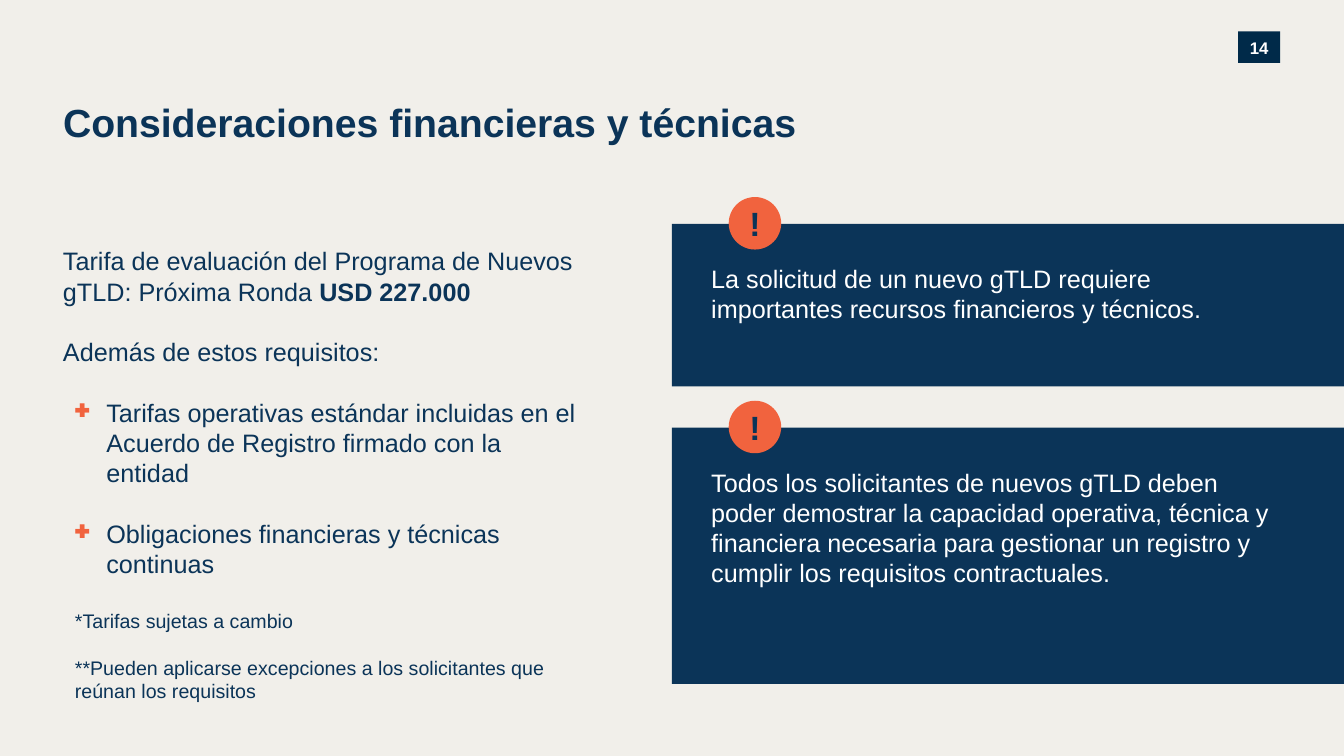
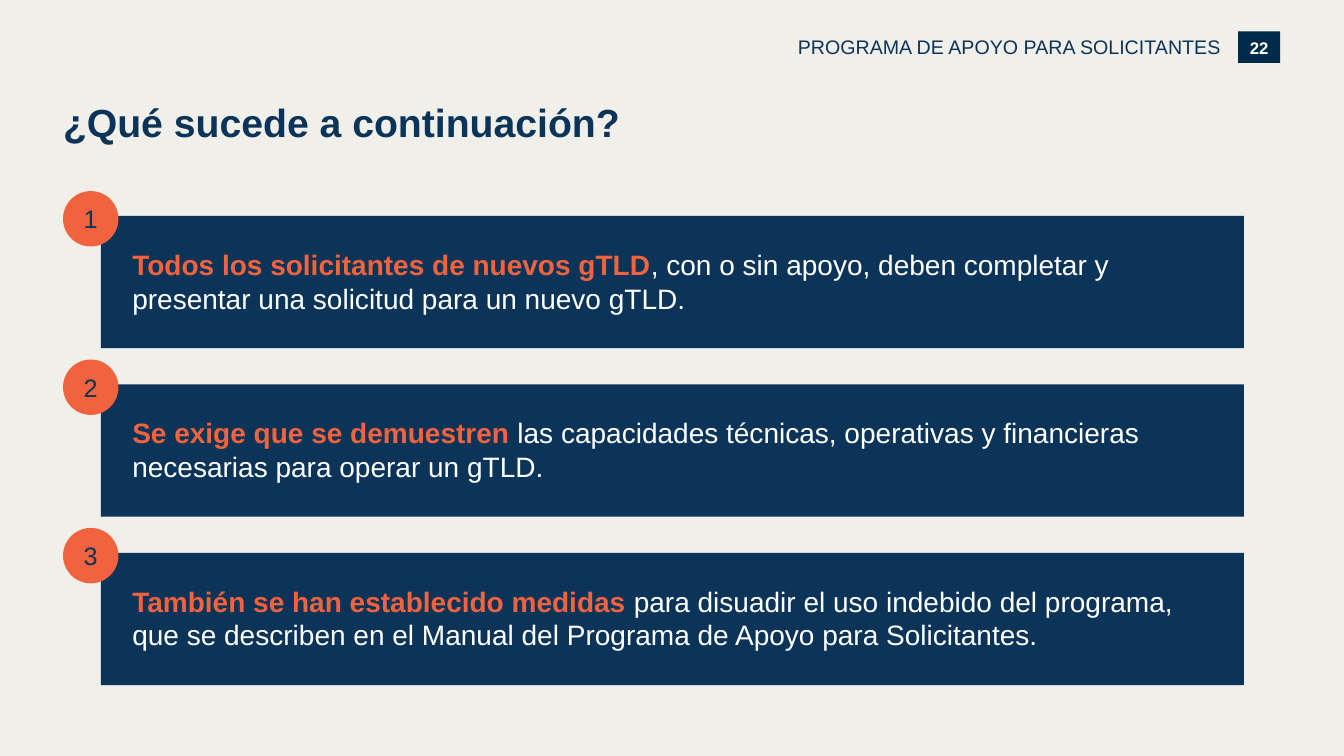
"""Build two slides on applying for a new gTLD."""
from lxml.etree import SubElement
from pptx import Presentation
from pptx.dml.color import RGBColor as RGB
from pptx.enum.shapes import MSO_SHAPE as Kind
from pptx.enum.text import MSO_ANCHOR as Anchor, MSO_AUTO_SIZE as Auto, PP_ALIGN as Align
from pptx.oxml.ns import qn
from pptx.util import Pt

CREAM = RGB(0xF1, 0xEF, 0xEA)
NAVY = RGB(0x0B, 0x34, 0x58)
DARK = RGB(0x00, 0x2A, 0x49)
ORANGE = RGB(0xF1, 0x63, 0x3E)
WHITE = RGB(0xFF, 0xFF, 0xFF)
FONT = "Arial"
LEFT = 45
TITLE_TOP = 70.5

FEE = "Tarifa de evaluación del Programa de Nuevos gTLD: Próxima Ronda "
DUTIES = [
    "Tarifas operativas estándar incluidas en el Acuerdo de Registro firmado con la entidad",
    "Obligaciones financieras y técnicas continuas",
]
NOTES = [
    "*Tarifas sujetas a cambio",
    "**Pueden aplicarse excepciones a los solicitantes que reúnan los requisitos",
]
ALERTS = [
    (160, 116, "La solicitud de un nuevo gTLD requiere importantes recursos financieros y técnicos."),
    (305.5, 183, "Todos los solicitantes de nuevos gTLD deben poder demostrar la capacidad operativa, "
     "técnica y financiera necesaria para gestionar un registro y cumplir los requisitos contractuales."),
]
STEPS = [
    ("Todos los solicitantes de nuevos gTLD",
     ", con o sin apoyo, deben completar y presentar una solicitud para un nuevo gTLD."),
    ("Se exige que se demuestren ",
     "las capacidades técnicas, operativas y financieras necesarias para operar un gTLD."),
    ("También se han establecido medidas ",
     "para disuadir el uso indebido del programa, que se describen en el Manual del "
     "Programa de Apoyo para Solicitantes."),
]


def style(font, size, color, bold=False):
    """Set face, size, colour and weight of a font."""
    font.name, font.size, font.bold = FONT, Pt(size), bold
    font.color.rgb = color


def write(para, text, size, color, bold=False, align=Align.LEFT):
    """Write one evenly styled paragraph."""
    para.text, para.alignment = text, align
    style(para.font, size, color, bold)


def inset(frame, left=0, top=0, right=0, bottom=0):
    """Set frame margins and turn wrapping on."""
    frame.margin_left, frame.margin_top = Pt(left), Pt(top)
    frame.margin_right, frame.margin_bottom = Pt(right), Pt(bottom)
    frame.word_wrap = True


def add_text(slide, *area):
    """Add an empty text box without margins and return its frame."""
    frame = slide.shapes.add_textbox(*map(Pt, area)).text_frame
    inset(frame)
    return frame


def add_box(slide, kind, area, fill, pads=(), anchor=Anchor.TOP):
    """Add a plain filled shape and return its frame."""
    shape = slide.shapes.add_shape(kind, *map(Pt, area))
    shape.shadow.inherit = False
    shape.fill.solid()
    shape.fill.fore_color.rgb = fill
    shape.line.fill.background()
    inset(shape.text_frame, *pads)
    shape.text_frame.vertical_anchor = anchor
    return shape.text_frame


def add_dot(slide, left, mid, size, text, points, bold=False):
    """Add an orange disc centred on the height mid."""
    frame = add_box(slide, Kind.OVAL, (left, mid - size / 2, size, size), ORANGE,
                    anchor=Anchor.MIDDLE)
    write(frame.paragraphs[0], text, points, NAVY, bold, Align.CENTER)


def add_slide(prs, title, page, width, height):
    """Add a slide with its title and page badge."""
    slide = prs.slides.add_slide(prs.slide_layouts[5])
    head = slide.shapes.title
    head.left, head.top, head.width, head.height = map(Pt, (LEFT, TITLE_TOP, width, height))
    frame = head.text_frame
    inset(frame)
    frame.auto_size, frame.vertical_anchor = Auto.NONE, Anchor.TOP
    write(frame.paragraphs[0], title, 28, NAVY, True)
    badge = add_box(slide, Kind.RECTANGLE, (884.5, 22.5, 30, 22.5), DARK, anchor=Anchor.MIDDLE)
    para = badge.paragraphs[0]
    write(para, str(page), 12, WHITE, True, Align.CENTER)
    para.line_spacing = 1.08
    return slide


def indent(para, left, hang=0, mark=None):
    """Indent a paragraph, with an orange bullet if mark is given."""
    props = para._p.get_or_add_pPr()
    props.set("marL", str(Pt(left)))
    props.set("indent", str(Pt(-hang)))
    if mark:
        tint = SubElement(SubElement(props, qn("a:buClr")), qn("a:srgbClr"))
        tint.set("val", str(ORANGE))
        SubElement(props, qn("a:buChar")).set("char", mark)


def add_para(frame, text, gap, size=18, **inds):
    """Append a navy paragraph after a gap."""
    para = frame.add_paragraph()
    if inds:
        indent(para, **inds)
    para.space_before = Pt(gap)
    write(para, text, size, NAVY)


def add_costs(prs):
    """Build the slide on financial and technical matters."""
    slide = add_slide(prs, "Consideraciones financieras y técnicas", 14, 690, 78)
    frame = add_text(slide, LEFT, 175.5, 368, 307)
    para = frame.paragraphs[0]
    write(para, FEE, 18, NAVY)
    para.add_run().text = "USD 227.000"
    para.runs[-1].font.bold = True
    add_para(frame, "Además de estos requisitos:", 21.6)
    for duty in DUTIES:
        add_para(frame, duty, 21.6, left=31, hang=22.5, mark="✚")
    for note, gap in zip(NOTES, (21.6, 16.8)):
        add_para(frame, note, gap, 14, left=8.5)
    for top, height, text in ALERTS:
        panel = add_box(slide, Kind.RECTANGLE, (480, top, 480, height), NAVY, (28, 28, 48, 21.5))
        write(panel.paragraphs[0], text, 18, WHITE)
        add_dot(slide, 520.5, top - 0.5, 37.5, "!", 24, True)


def add_next(prs):
    """Build the slide on the next steps."""
    slide = add_slide(prs, "¿Qué sucede a continuación?", 22, 564, 42)
    for num, (lead, rest) in enumerate(STEPS):
        top = 154.3 + num * 120.3
        panel = add_box(slide, Kind.RECTANGLE, (72, top, 816.5, 94.5), NAVY,
                        (22.5, 22.5, 25, 22.5))
        para = panel.paragraphs[0]
        write(para, lead, 20, WHITE)
        style(para.runs[0].font, 20, ORANGE, True)
        para.add_run().text = rest
        add_dot(slide, LEFT, top + 2, 39.6, str(num + 1), 18)
    label = add_text(slide, 524, 25, 348, 17)
    write(label.paragraphs[0], "PROGRAMA DE APOYO PARA SOLICITANTES", 14, NAVY, align=Align.RIGHT)


def main():
    """Create and save the presentation."""
    prs = Presentation()
    prs.slide_width, prs.slide_height = Pt(960), Pt(540)
    back = prs.slide_master.background.fill
    back.solid()
    back.fore_color.rgb = CREAM
    add_costs(prs)
    add_next(prs)
    prs.save("out.pptx")


if __name__ == "__main__":
    main()
